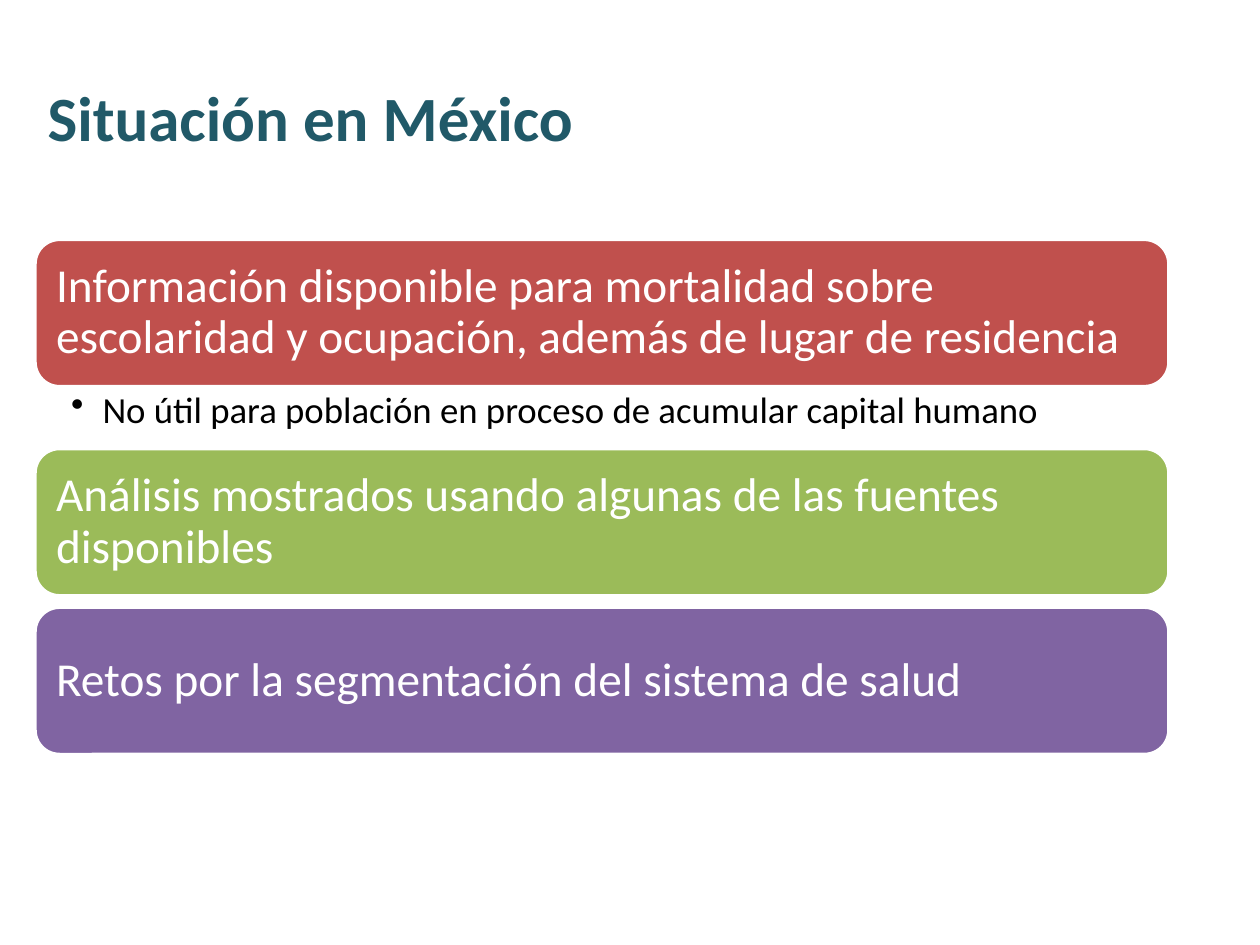
from lxml import etree
from pptx import Presentation
from pptx.dml.color import RGBColor
from pptx.enum import shapes, text
from pptx.oxml import ns
from pptx.util import Pt

TEAL = RGBColor(0x21, 0x59, 0x68)
RED = RGBColor(0xC0, 0x50, 0x4D)
GREEN = RGBColor(0x9B, 0xBB, 0x59)
PURPLE = RGBColor(0x80, 0x64, 0xA2)
WHITE = RGBColor(0xFF, 0xFF, 0xFF)
BLACK = RGBColor(0, 0, 0)

LEFT, WIDTH = 20, 648
CARD, NOTE, GAP = 84.2, 35.3, 6.5

# Fill colour, heading and optional note of each card
ITEMS = [
    (RED, "Información disponible para mortalidad sobre escolaridad y "
          "ocupación, además de lugar de residencia",
     "No útil para población en proceso de acumular capital humano"),
    (GREEN, "Análisis mostrados usando algunas de las fuentes disponibles", None),
    (PURPLE, "Retos por la segmentación del sistema de salud", None),
]


def write(frame, words, size, color, bold, spacing, anchor, insets):
    sides = ("margin_left", "margin_top", "margin_right", "margin_bottom")
    form = dict(zip(sides, map(Pt, insets)))
    form.update(word_wrap=True, vertical_anchor=anchor,
                auto_size=text.MSO_AUTO_SIZE.NONE)
    for key, value in form.items():
        setattr(frame, key, value)
    frame.text = words
    para = frame.paragraphs[0]
    para.alignment = text.PP_ALIGN.LEFT
    para.line_spacing = spacing
    font = para.runs[0].font
    for key, value in dict(name="Calibri", size=Pt(size), bold=bold).items():
        setattr(font, key, value)
    font.color.rgb = color
    return para


def add_title(slide, box):
    title = slide.shapes.title
    for key, value in zip(("left", "top", "width", "height"), box):
        setattr(title, key, Pt(value))
    write(title.text_frame, "Situación en México", 36, TEAL, True, 1,
          text.MSO_ANCHOR.MIDDLE, (7.2, 3.6, 7.2, 3.6))


def add_card(slide, box, fill, words):
    card = slide.shapes.add_shape(
        shapes.MSO_SHAPE.ROUNDED_RECTANGLE, *map(Pt, box))
    card.shadow.inherit = False
    card.fill.solid()
    card.fill.fore_color.rgb = fill
    card.line.color.rgb = WHITE
    card.line.width = Pt(2)
    write(card.text_frame, words, 27, WHITE, False, 0.9,
          text.MSO_ANCHOR.MIDDLE, (8, 8, 8, 8))


def add_note(slide, box, words):
    note = slide.shapes.add_textbox(*map(Pt, box))
    para = write(note.text_frame, words, 21, BLACK, False, 0.9,
                 text.MSO_ANCHOR.TOP, (20.6, 2.7, 15, 2.7))
    # Bullet with a hanging indent
    props = para._p.get_or_add_pPr()
    props.set("marL", str(Pt(18)))
    props.set("indent", str(-Pt(18)))
    etree.SubElement(props, ns.qn("a:buChar")).set("char", "•")


def add_list(slide, left, top, width):
    for fill, words, note in ITEMS:
        add_card(slide, (left, top, width, CARD), fill, words)
        top += CARD
        if note:
            add_note(slide, (left, top, width, NOTE), note)
        top += NOTE if note else GAP


def main():
    deck = Presentation()
    deck.slide_width, deck.slide_height = Pt(720), Pt(540)
    slide = deck.slides.add_slide(deck.slide_layouts[5])
    add_title(slide, (LEFT, 21.6, 646.6, 90))
    add_list(slide, LEFT, 136.8, WIDTH)
    deck.save("out.pptx")


if __name__ == "__main__":
    main()
